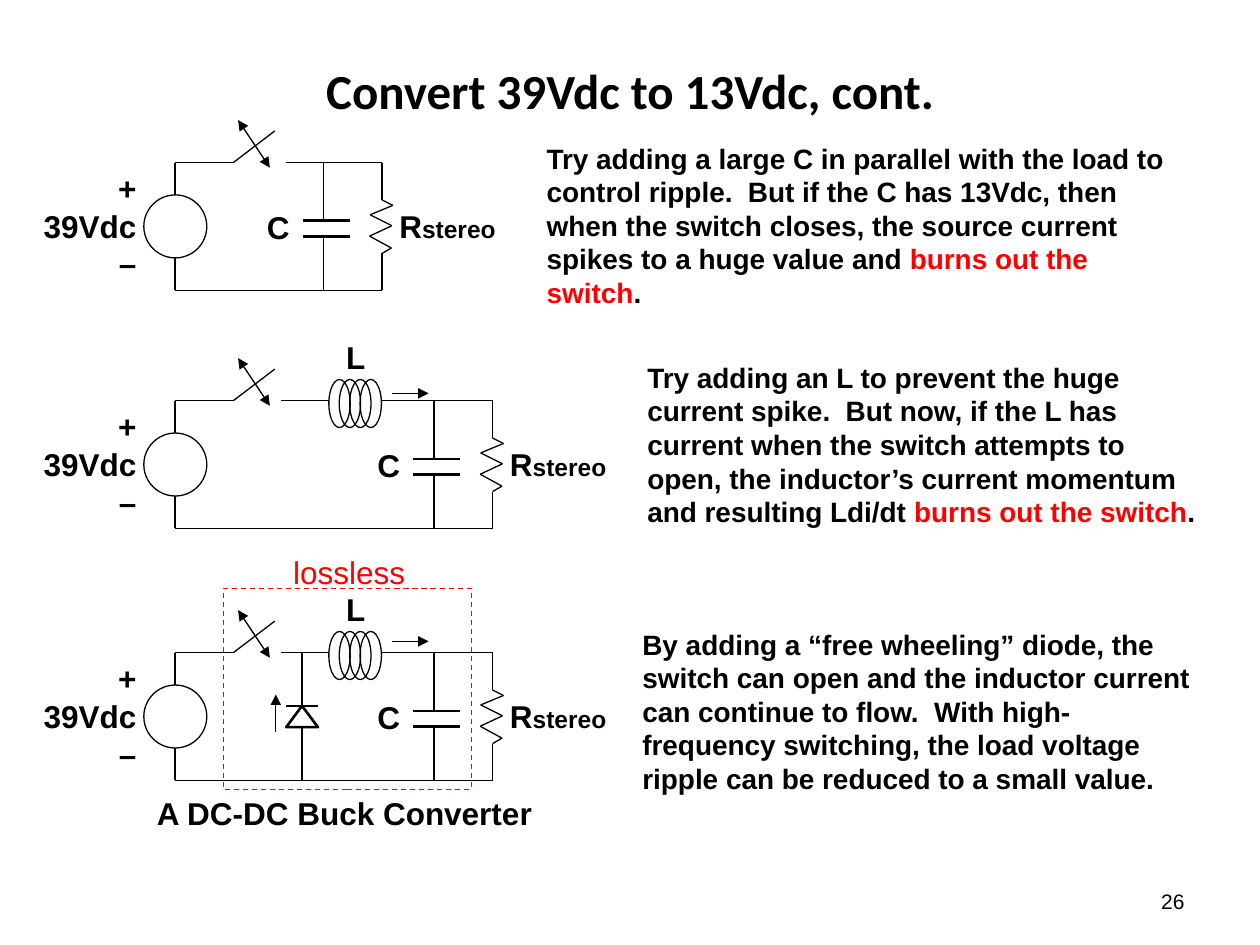
"""Build a slide that leads in three circuits to a buck converter."""
from lxml import etree
from pptx import Presentation
from pptx.dml.color import RGBColor
from pptx.enum.dml import MSO_LINE
from pptx.enum.shapes import MSO_CONNECTOR, MSO_SHAPE
from pptx.enum.text import MSO_ANCHOR, MSO_AUTO_SIZE, PP_ALIGN
from pptx.oxml.ns import qn
from pptx.util import Cm, Pt

BLACK = RGBColor(0, 0, 0)
RED = RGBColor(255, 0, 0)
LEFT, MID, RIGHT = PP_ALIGN.LEFT, PP_ALIGN.CENTER, PP_ALIGN.RIGHT
TOP, CENTER = MSO_ANCHOR.TOP, MSO_ANCHOR.MIDDLE
FIT, FIXED = MSO_AUTO_SIZE.SHAPE_TO_FIT_TEXT, MSO_AUTO_SIZE.NONE
OVAL, BOX, PEAK = MSO_SHAPE.OVAL, MSO_SHAPE.RECTANGLE, MSO_SHAPE.ISOSCELES_TRIANGLE
LINE, DASH = MSO_CONNECTOR.STRAIGHT, MSO_LINE.DASH


def text(words, home, box, size=18, bold=True, color=BLACK, font="Arial",
         align=LEFT, anchor=TOP, fit=FIT, tail=()):
    frame = home.add_textbox(*map(Cm, box)).text_frame
    frame.word_wrap = True
    frame.auto_size = fit
    frame.vertical_anchor = anchor
    for i, row in enumerate(words.split("\n")):
        para = frame.add_paragraph() if i else frame.paragraphs[0]
        para.alignment = align
        runs = [(row, size, color)]
        if not i:
            runs += tail
        for part, points, tint in runs:
            run = para.add_run()
            run.text = part
            run.font.name = font
            run.font.size = Pt(points)
            run.font.bold = bold
            run.font.color.rgb = tint


def wire(home, x1, y1, x2, y2, width=0.75, ends=()):
    link = home.add_connector(LINE, Cm(x1), Cm(y1), Cm(x2), Cm(y2))
    link.line.color.rgb = BLACK
    link.line.width = Pt(width)
    for end in ends:
        etree.SubElement(link.line._ln, qn(f"a:{end}"), type="triangle")
    etree.SubElement(link._element.spPr, qn("a:effectLst"))


deck = Presentation()
deck.slide_width, deck.slide_height = Cm(25.4), Cm(19.05)
slide = deck.slides.add_slide(deck.slide_layouts[6])
page = slide.shapes

text("26", page, (18.21, 17.65, 5.92, 1.02), size=12, bold=False,
     align=RIGHT, anchor=CENTER, fit=FIXED)
text("Convert 39Vdc to 13Vdc, cont.", page, (1.27, 0.64, 22.86, 2.36), size=28,
     font="Calibri", align=MID, anchor=CENTER, fit=FIXED)

burns = [("burns out the switch", 16, RED), (".", 16, BLACK)]
notes = [
    ("Try adding a large C in parallel with the load to control ripple.  But if the C "
     "has 13Vdc, then when the switch closes, the source current spikes to a huge "
     "value and ", (10.77, 2.72, 13.34, 3.66), burns),
    ("Try adding an L to prevent the huge current spike.  But now, if the L has current "
     "when the switch attempts to open, the inductor’s current momentum and resulting "
     "Ldi/dt ", (12.8, 7.14, 11.63, 3.66), burns),
    ("By adding a “free wheeling” diode, the switch can open and the inductor current "
     "can continue to flow.  With high-frequency switching, the load voltage ripple "
     "can be reduced to a small value.", (12.7, 12.52, 11.63, 3.66), []),
]
for words, box, tail in notes:
    text(words, page, box, size=16, tail=tail)

DROP = 2.57
FEED = 3.53
ZIGZAG = [(0, 0), (0, 0.75), (0.22, 0.86), (-0.24, 1.05), (0.2, 1.27),
          (-0.25, 1.48), (0.19, 1.72), (0, 1.83), (0, DROP)]
# top rail, load position, inductor arrow height, diode
circuits = [(3.28, 7.7, None, False), (8.08, 9.93, -0.15, False),
            (13.16, 9.93, -0.23, True)]
shapes = []

for top, load, flow, diode in circuits:
    home = page.add_group_shape().shapes
    shapes.append((home, OVAL, (2.9, top + 0.65, 1.27, 1.27), BLACK, 0.75))
    plate, lead = load - 1.6, load - 1.18
    wires = [
        (FEED, 0, FEED, 0.65), (FEED, 1.92, FEED, DROP),
        (FEED, 0, 4.7, 0), (4.7, 0, 5.54, -0.64),
        (4.8, -0.86, 5.44, 0.1, 0.75, ("headEnd", "tailEnd")),
        (FEED, DROP, load, DROP),
        (plate, 1.17, plate + 0.95, 1.17, 1.5), (plate, 1.49, plate + 0.95, 1.49, 1.5),
        (lead, 0, lead, 1.17), (lead, 1.49, lead, DROP),
    ]
    wires += [(load + x1, y1, load + x2, y2)
              for (x1, y1), (x2, y2) in zip(ZIGZAG, ZIGZAG[1:])]
    text("+\n39Vdc\n–", home, (0.23, top, 2.77, 2.54), align=RIGHT)
    text("C", home, (load - 2.57, top + 0.79, 0.97, 1.02))
    text("R", home, (load + 0.1, top + 0.76, 2.57, 1.02), tail=[("stereo", 14, BLACK)])
    if flow is None:
        wires.append((5.77, 0, load, 0))
    else:
        wires += [(5.66, 0, 6.63, 0), (7.7, 0, load, 0),
                  (7.9, flow, 8.64, flow, 0.75, ("tailEnd",))]
        shapes += [(home, OVAL, (6.63 + 0.21 * i, top - 0.43, 0.43, 0.97), BLACK, 0.75)
                   for i in range(4)]
        text("L", home, (6.73, top - 1.4, 0.97, 1.02))
    if diode:
        wires += [(5.77, 1.07, 6.41, 1.07, 1.5), (6.09, 0, 6.09, 1.07),
                  (6.09, 1.5, 6.09, DROP), (5.56, 1.6, 5.56, 0.84, 0.75, ("tailEnd",))]
        shapes.append((home, PEAK, (5.77, top + 1.07, 0.64, 0.43), BLACK, 1.5))
        text("A DC-DC Buck Converter", home, (2.46, 15.88, 8.97, 1.02), align=MID)
    for x1, y1, x2, y2, *look in wires:
        wire(home, x1, top + y1, x2, top + y2, *look)

shapes.append((page, BOX, (4.5, 11.86, 5, 4.06), RED, 0.75))
for home, kind, box, color, width in shapes:
    shape = home.add_shape(kind, *map(Cm, box))
    shape.shadow.inherit = False
    shape.fill.background()
    shape.line.color.rgb = color
    shape.line.width = Pt(width)
    if kind == BOX:
        shape.line.dash_style = DASH
text("lossless", page, (5.66, 11.02, 3.1, 1.02), bold=False, color=RED)

deck.save("out.pptx")
